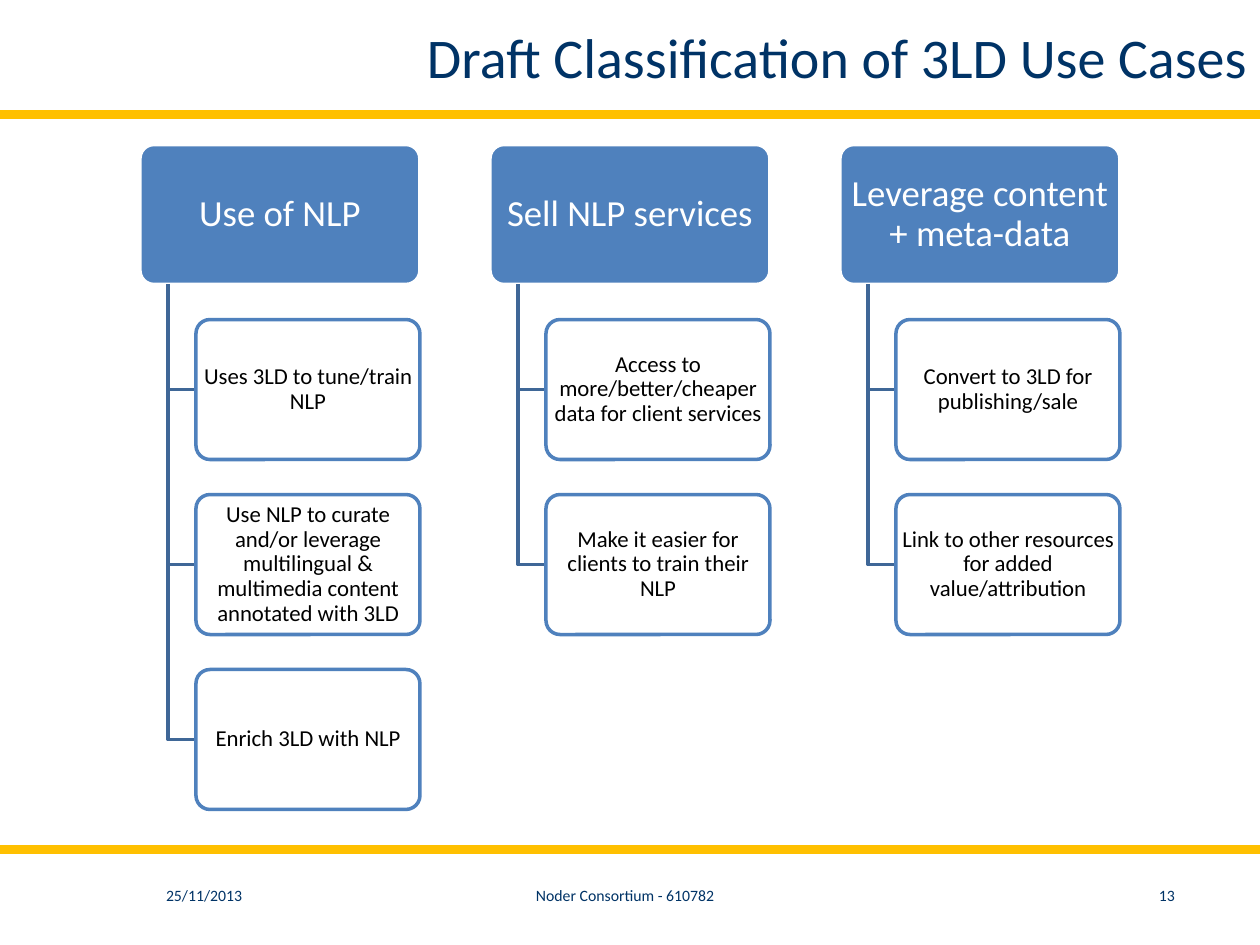
from lxml import etree
from pptx import Presentation
from pptx.dml.color import RGBColor
from pptx.enum import shapes, text
from pptx.oxml import ns
from pptx.util import Pt

COLORS = {
    "gold": "FFC000", "navy": "003366", "blue": "4F81BD",
    "steel": "3F6797", "white": "FFFFFF", "black": "000000",
}
GROUPS = [
    ("Use of NLP", [
        "Uses 3LD to tune/train NLP",
        "Use NLP to curate and/or leverage multilingual & "
        "multimedia content annotated with 3LD",
        "Enrich 3LD with NLP",
    ]),
    ("Sell NLP services", [
        "Access to more/better/cheaper data for client services",
        "Make it easier for clients to train their NLP",
    ]),
    ("Leverage content + meta-data", [
        "Convert to 3LD for publishing/sale",
        "Link to other resources for added value/attribution",
    ]),
]
LEFT, TOP = 80, 82.6
HEAD, CASE, TALL = 160, 128, 80
COL, ROW = 200, 100
TRUNK, INDENT = 16, 32


def rgb(name):
    return RGBColor.from_string(COLORS[name])


class Board:
    """Holds the slide and the style shared by its elements."""
    font = "Calibri"
    width = 2

    def __init__(self, slide):
        self.slide = slide

    def letter(self, frame, words, size, color, align):
        """Set the words and their style in a text frame."""
        frame.word_wrap = True
        para = frame.paragraphs[0]
        para.text = words
        para.alignment = align
        font = para.font
        font.name, font.size = self.font, Pt(size)
        font.color.rgb = rgb(color)
        return para

    def label(self, x, y, w, h, words, size=9, align=text.PP_ALIGN.LEFT):
        box = self.slide.shapes.add_textbox(Pt(x), Pt(y), Pt(w), Pt(h))
        box.text_frame.vertical_anchor = text.MSO_ANCHOR.MIDDLE
        self.letter(box.text_frame, words, size, "navy", align)

    def rule(self, y):
        line = self.slide.shapes.add_connector(
            shapes.MSO_CONNECTOR.STRAIGHT, 0, Pt(y), Pt(720), Pt(y))
        line.line.color.rgb = rgb("gold")
        line.line.width = Pt(5)
        etree.SubElement(line._element.spPr, ns.qn("a:effectLst"))

    def card(self, x, y, w, words, size, fill, edge, ink, alpha=100):
        box = self.slide.shapes.add_shape(
            shapes.MSO_SHAPE.ROUNDED_RECTANGLE, Pt(x), Pt(y), Pt(w), Pt(TALL))
        box.adjustments[0] = 0.1
        box.shadow.inherit = False
        box.fill.solid()
        box.fill.fore_color.rgb = rgb(fill)
        if alpha < 100:
            tint = box._element.spPr.find(ns.qn("a:solidFill"))[0]
            etree.SubElement(tint, ns.qn("a:alpha"), val=str(alpha * 1000))
        box.line.color.rgb = rgb(edge)
        box.line.width = Pt(self.width)
        frame = box.text_frame
        frame.margin_left = frame.margin_right = 0
        frame.margin_top = frame.margin_bottom = 0
        frame.vertical_anchor = text.MSO_ANCHOR.MIDDLE
        para = self.letter(frame, words, size, ink, text.PP_ALIGN.CENTER)
        para.line_spacing = 0.9

    def branch(self, x, y, end_x, end_y):
        """Draw an elbow that runs down, then right."""
        pen = self.slide.shapes.build_freeform(Pt(x), Pt(y))
        pen.add_line_segments(
            [(Pt(x), Pt(end_y)), (Pt(end_x), Pt(end_y))], close=False)
        elbow = pen.convert_to_shape()
        elbow.shadow.inherit = False
        elbow.fill.background()
        elbow.line.color.rgb = rgb("steel")
        elbow.line.width = Pt(self.width)

    def group(self, x, title, cases):
        self.card(x, TOP, HEAD, title, 21, "blue", "white", "white")
        for row, words in enumerate(cases, 1):
            y = TOP + row * ROW
            self.branch(x + TRUNK, TOP + TALL, x + INDENT, y + TALL / 2)
            self.card(x + INDENT, y, CASE, words, 13,
                      "white", "blue", "black", alpha=90)


def main():
    deck = Presentation()
    deck.slide_width, deck.slide_height = Pt(720), Pt(540)
    board = Board(deck.slides.add_slide(deck.slide_layouts[6]))
    for y in (65.5, 485.3):
        board.rule(y)
    board.label(87.8, 502.6, 73.4, 18, "25/11/2013")
    board.label(655.2, 502.6, 45.4, 18, "13")
    board.label(257.8, 502.6, 198.7, 18, "Noder Consortium - 610782",
                align=text.PP_ALIGN.CENTER)
    board.label(189.4, 4.3, 530.6, 55.4,
                "Draft Classification of 3LD Use Cases", 32,
                text.PP_ALIGN.RIGHT)
    for col, (title, cases) in enumerate(GROUPS):
        board.group(LEFT + col * COL, title, cases)
    deck.save("out.pptx")


if __name__ == "__main__":
    main()
